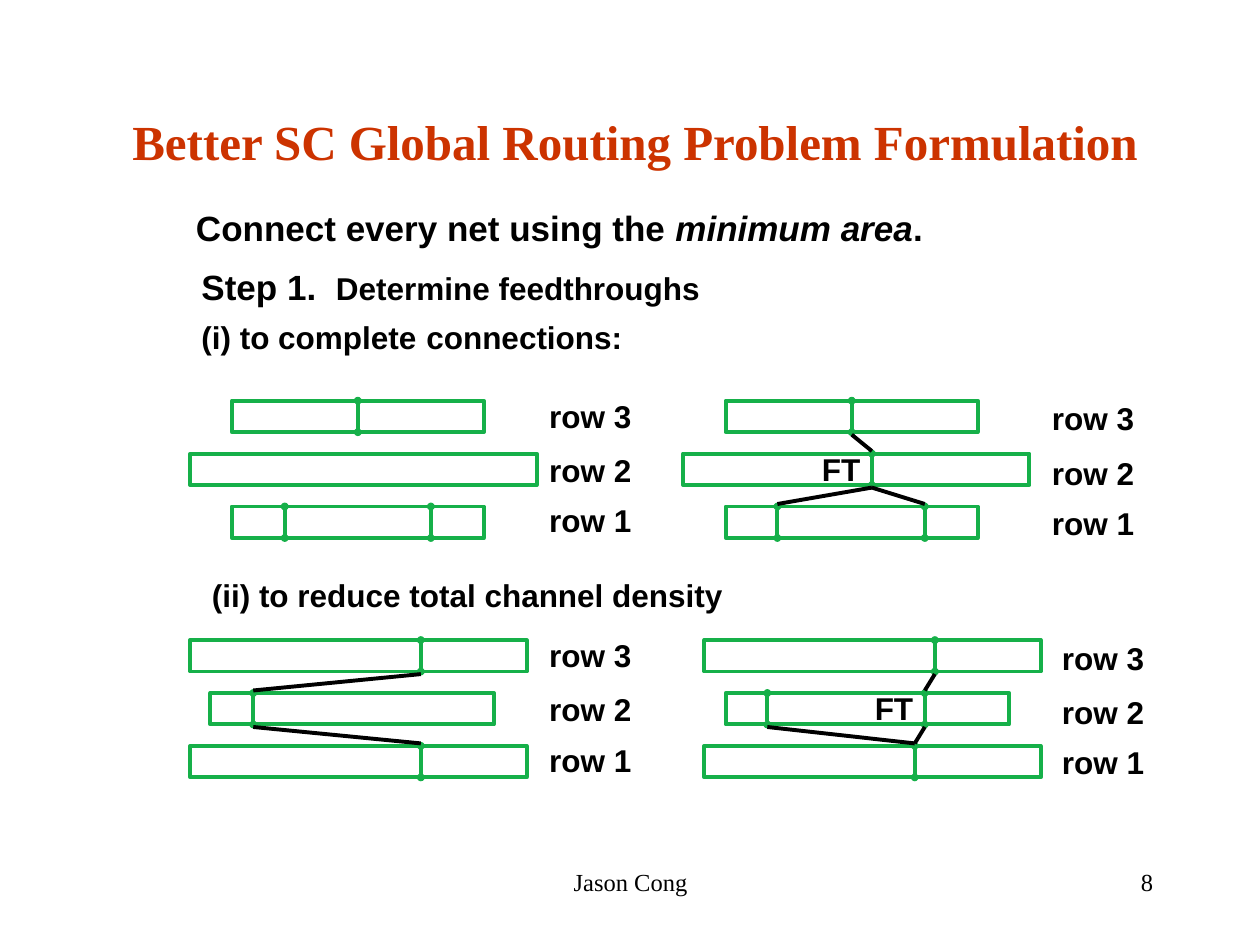
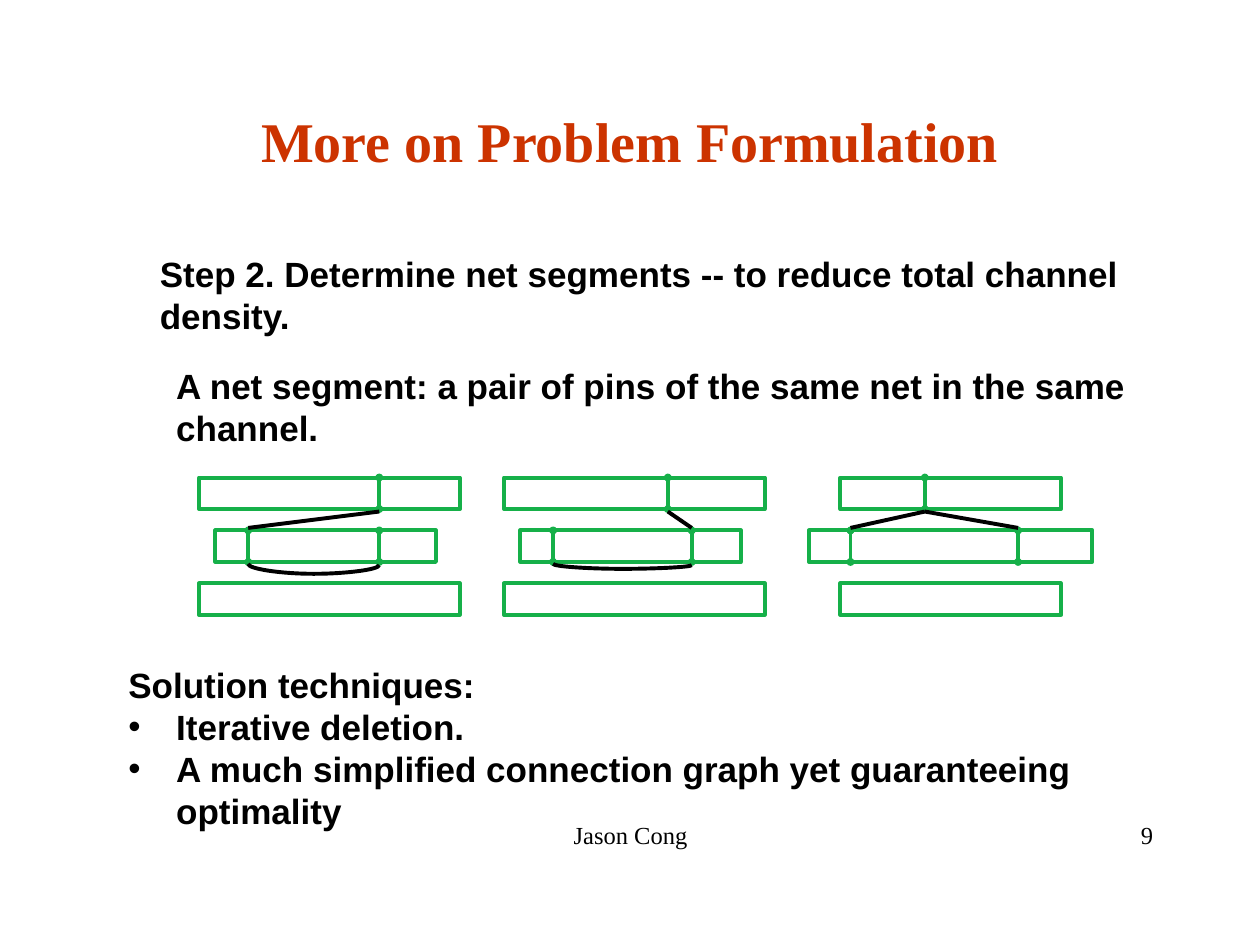
from lxml.etree import SubElement
from pptx import Presentation
from pptx.dml.color import RGBColor
from pptx.enum.shapes import MSO_CONNECTOR, MSO_SHAPE
from pptx.enum.text import MSO_ANCHOR, MSO_AUTO_SIZE, PP_ALIGN
from pptx.oxml.ns import qn
from pptx.util import Inches, Pt

COLORS = {"title": "CC3300", "cell": "16B049", "ink": "000000"}
SERIF, SANS = "Times New Roman", "Arial"
LINE_WIDTH = Pt(2.25)

ROW_HEIGHT, ROW_PITCH = 0.25, 0.42
WIRE_GAP = 0.02
LABEL_OFFSETS = {"row 3": 0, "row 2": 0.43, "row 1": 0.83}

TITLE = {"name": SERIF, "bold": True}
FOOTER = {"name": SERIF, "size": Pt(14)}
BODY = {"name": SANS, "size": Pt(20), "bold": True}
LABEL = {**BODY, "size": Pt(18)}

FREE = {"word_wrap": False, "vertical_anchor": MSO_ANCHOR.MIDDLE,
        "auto_size": MSO_AUTO_SIZE.SHAPE_TO_FIT_TEXT}
WRAPPED = {**FREE, "word_wrap": True}
FIXED = {"word_wrap": True, "auto_size": MSO_AUTO_SIZE.NONE}


def rgb(name):
    return RGBColor.from_string(COLORS[name])


def apply_format(target, values):
    for attribute, value in values.items():
        setattr(target, attribute, value)


def add_text(slide, box, paragraphs, frame_format, color="ink"):
    """Each paragraph is (runs, paragraph format, indent); each run is (text, font format).

    The indent is None or (left margin, first line, bullet or None).
    """
    frame = slide.shapes.add_textbox(*map(Inches, box)).text_frame
    apply_format(frame, frame_format)
    for index, (runs, paragraph_format, indent) in enumerate(paragraphs):
        paragraph = frame.add_paragraph() if index else frame.paragraphs[0]
        apply_format(paragraph, paragraph_format)
        if indent:
            set_indent(paragraph, *indent)
        for words, font_format in runs:
            run = paragraph.add_run()
            run.text = words
            apply_format(run.font, font_format)
            run.font.color.rgb = rgb(color)


def set_indent(paragraph, margin, first_line, bullet):
    properties = paragraph._p.get_or_add_pPr()
    properties.set("marL", str(Inches(margin)))
    properties.set("indent", str(Inches(first_line)))
    if bullet:
        SubElement(properties, qn("a:buFont")).set("typeface", SANS)
        SubElement(properties, qn("a:buChar")).set("char", bullet)


def add_line_of_text(slide, box, words, font_format, frame_format,
                     align=PP_ALIGN.CENTER, color="ink"):
    paragraph = ([(words, font_format)], {"alignment": align}, None)
    add_text(slide, box, [paragraph], frame_format, color)


def add_frame(slide, title, title_box, title_size, footer_top, number):
    """Title, author and slide number."""
    add_line_of_text(slide, (3.42, footer_top, 3.17, 0.5), "Jason Cong", FOOTER, FIXED)
    add_line_of_text(slide, (7.17, footer_top, 2.08, 0.5), str(number), FOOTER, FIXED,
                     PP_ALIGN.RIGHT)
    add_line_of_text(slide, title_box, title, {**TITLE, "size": Pt(title_size)},
                     {**FIXED, "vertical_anchor": MSO_ANCHOR.MIDDLE}, color="title")


def add_label(slide, left, top, words, width=0.85):
    add_line_of_text(slide, (left, top, width, 0.4), words, LABEL, FREE)


def add_row_labels(slide, left, top):
    for words, offset in LABEL_OFFSETS.items():
        add_label(slide, left, top + offset, words)


def add_line(slide, start, end, color, kind=MSO_CONNECTOR.STRAIGHT):
    line = slide.shapes.add_connector(kind, *map(Inches, (*start, *end)))
    line.line.color.rgb = rgb(color)
    line.line.width = LINE_WIDTH
    SubElement(line._element.spPr, qn("a:effectLst"))
    return line


def add_cell_row(slide, left, top, width):
    row = slide.shapes.add_shape(MSO_SHAPE.RECTANGLE,
                                 *map(Inches, (left, top, width, ROW_HEIGHT)))
    row.shadow.inherit = False
    row.fill.background()
    row.line.color.rgb = rgb("cell")
    row.line.width = LINE_WIDTH
    return row


def add_pin(slide, x, top):
    """Line across a cell row with a round terminal at both ends."""
    pin = add_line(slide, (x, top), (x, top + ROW_HEIGHT), "cell")
    outline = pin.line._get_or_add_ln()
    for end in ("a:headEnd", "a:tailEnd"):
        terminal = SubElement(outline, qn(end))
        for attribute, value in {"type": "oval", "w": "sm", "len": "sm"}.items():
            terminal.set(attribute, value)
    return pin


def add_placement(slide, top, rows, wires):
    """Rows, top down, are (left, width, pins); wires are (channel, upper x, lower x)."""
    for index, (left, width, pins) in enumerate(rows):
        row_top = top + index * ROW_PITCH
        row = add_cell_row(slide, left, row_top, width)
        for x in pins:
            pin = add_pin(slide, x, row_top)
            if abs(x - left - width / 2) < 0.01:
                pin.begin_connect(row, 0)
                pin.end_connect(row, 2)
    for channel, upper_x, lower_x in wires:
        row_top = top + channel * ROW_PITCH
        add_line(slide, (upper_x, row_top + ROW_HEIGHT + WIRE_GAP),
                 (lower_x, row_top + ROW_PITCH - WIRE_GAP), "ink")


def add_sagging_wire(slide, left, right, top, depth):
    """Curve that joins two pins of one row from below."""
    middle, half_span, half_rise = (left + right) / 2, (right - left) / 2, 0.005
    wire = add_line(slide, (middle + half_rise, top - half_span),
                    (middle - half_rise, top + half_span), "ink", MSO_CONNECTOR.CURVE)
    properties = wire._element.spPr
    properties.find(qn("a:xfrm")).set("rot", str(270 * 60000))
    geometry = properties.find(qn("a:prstGeom"))
    guides = geometry.find(qn("a:avLst"))
    if guides is None:
        guides = SubElement(geometry, qn("a:avLst"))
    guide = SubElement(guides, qn("a:gd"))
    guide.set("name", "adj1")
    guide.set("fmla", f"val {round(depth / (2 * half_rise) * 100000)}")


def build_feedthroughs(slide):
    add_frame(slide, "Better SC Global Routing Problem Formulation",
              (0.58, 0.49, 8.92, 1.25), 28, 6.83, 8)
    justified = {"alignment": PP_ALIGN.JUSTIFY}
    step_indent = (0.12, 0, None)
    add_text(slide, (1.38, 1.56, 6.09, 1.35), [
        ([(" Connect every net using the ", BODY),
          ("minimum area", {**BODY, "italic": True}), (".", BODY)], justified, None),
        ([("Step 1.  ", BODY), ("Determine feedthroughs", LABEL)],
         {**justified, "space_before": Pt(10)}, step_indent),
        ([("(i) to complete", LABEL), (" ", BODY), ("connections:", LABEL)],
         {**justified, "space_before": Pt(4)}, step_indent),
    ], FREE)
    add_label(slide, 1.58, 4.52, "(ii) to reduce total channel density", 4.26)

    add_placement(slide, 3.18,
                  [(1.84, 2, [2.84]), (1.51, 2.75, []), (1.84, 2, [2.26, 3.42])], [])
    add_placement(slide, 3.18,
                  [(5.76, 2, [6.76]), (5.42, 2.75, [6.92]), (5.76, 2, [6.17, 7.34])],
                  [(0, 6.76, 6.92), (1, 6.92, 6.17), (1, 6.92, 7.34)])
    add_placement(slide, 5.08,
                  [(1.51, 2.67, [3.34]), (1.67, 2.25, [2.01]), (1.51, 2.67, [3.34])],
                  [(0, 3.34, 2.01), (1, 2.01, 3.34)])
    add_placement(slide, 5.08,
                  [(5.59, 2.67, [7.42]), (5.76, 2.25, [6.09, 7.34]), (5.59, 2.67, [7.26])],
                  [(0, 7.42, 7.34), (1, 7.34, 7.26), (1, 6.09, 7.26)])

    for left, top in [(4.26, 3.1), (8.25, 3.12), (4.26, 5), (8.33, 5.02)]:
        add_row_labels(slide, left, top)
    for left, top in [(6.42, 3.52), (6.84, 5.42)]:
        add_label(slide, left, top, "FT", 0.51)


def build_net_segments(slide):
    add_frame(slide, "More on Problem Formulation", (0.75, 0.49, 8.5, 1.25), 32, 6.46, 9)
    add_text(slide, (1.17, 1.92, 8.5, 1.72), [
        ([("Step 2. Determine net segments -- to reduce total channel density.", BODY)],
         {}, None),
        ([("A net segment: a pair of pins of the same net in the same channel.", BODY)],
         {"space_before": Pt(16)}, (0.13, 0, None)),
    ], WRAPPED)

    placements = [
        ([(1.58, 2.07, [3.01]), (1.71, 1.75, [1.97, 3.01]), (1.58, 2.07, [])],
         [(0, 3.01, 1.97)]),
        ([(4, 2.07, [5.3]), (4.13, 1.75, [4.39, 5.49]), (4, 2.07, [])],
         [(0, 5.3, 5.49)]),
        ([(6.67, 1.75, [7.34]), (6.42, 2.25, [6.75, 8.08]), (6.67, 1.75, [])],
         [(0, 7.34, 6.75), (0, 7.34, 8.08)]),
    ]
    for rows, wires in placements:
        add_placement(slide, 3.79, rows, wires)
    add_sagging_wire(slide, 1.97, 3.01, 4.48, 0.08)
    add_sagging_wire(slide, 4.39, 5.49, 4.48, 0.04)

    techniques = ["Iterative deletion.",
                  "A much simplified connection graph yet guaranteeing optimality"]
    add_text(slide, (0.92, 5.21, 8.92, 1.45),
             [([("Solution techniques:", BODY)], {}, None)]
             + [([(words, BODY)], {}, (0.38, -0.38, "•")) for words in techniques],
             WRAPPED)


def main():
    deck = Presentation()
    deck.slide_width, deck.slide_height = Inches(10), Inches(7.5)
    blank = deck.slide_layouts[6]
    for build in (build_feedthroughs, build_net_segments):
        build(deck.slides.add_slide(blank))
    deck.save("out.pptx")


if __name__ == "__main__":
    main()
